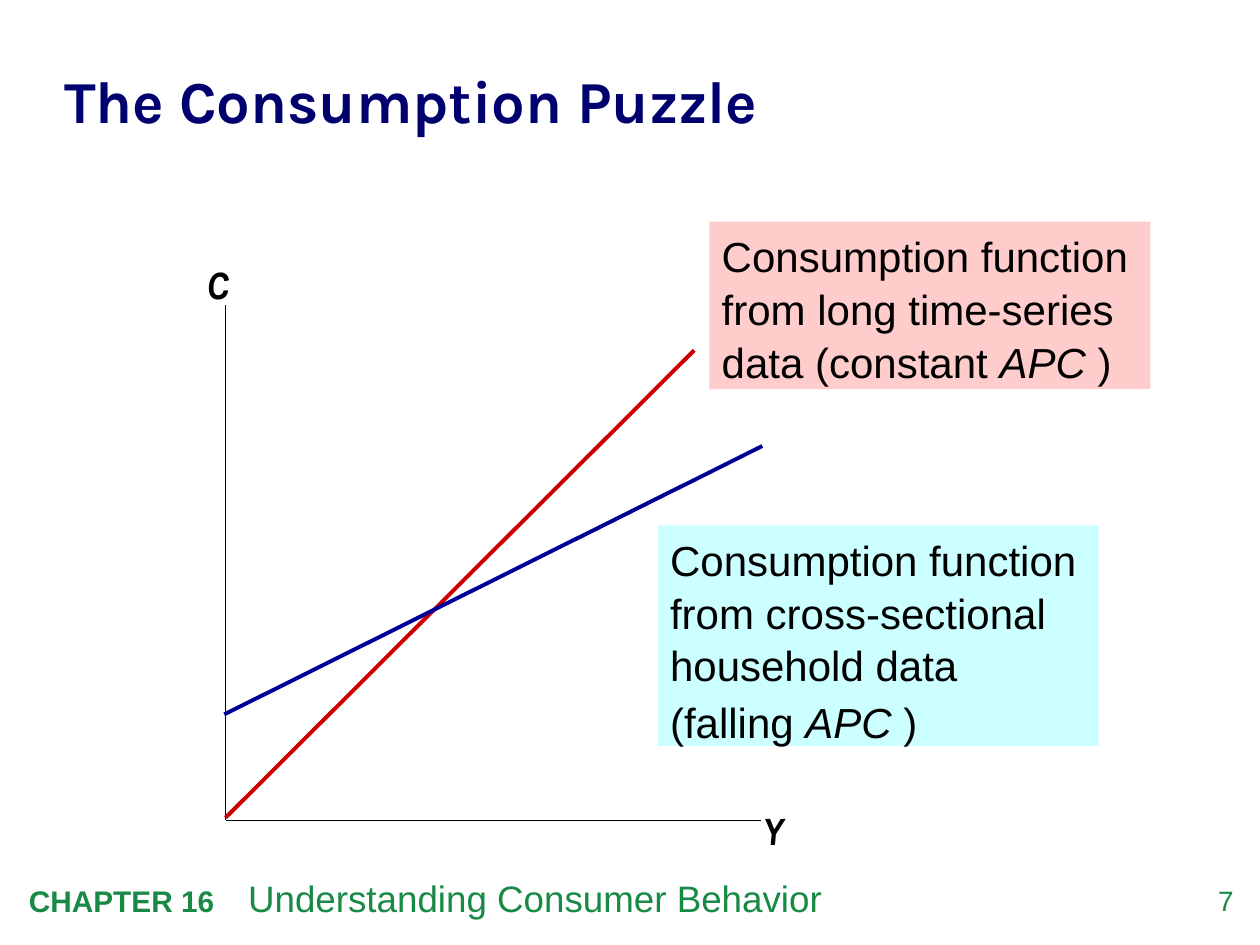
import lxml.etree
import pptx
import pptx.dml.color
import pptx.enum.shapes
import pptx.enum.text
import pptx.oxml.ns
import pptx.util

RGBColor = pptx.dml.color.RGBColor
Align = pptx.enum.text.PP_ALIGN
Anchor = pptx.enum.text.MSO_ANCHOR

BLACK = RGBColor(0x00, 0x00, 0x00)
NAVY = RGBColor(0x00, 0x00, 0x6E)
GREEN = RGBColor(0x19, 0x8A, 0x46)
RED = RGBColor(0xCC, 0x00, 0x00)
BLUE = RGBColor(0x00, 0x00, 0x99)
PINK = RGBColor(0xFF, 0xCC, 0xCC)
CYAN = RGBColor(0xCC, 0xFF, 0xFF)

COLUMNS, ROWS = 100, 75
ORIGIN = (17.9, 65.1)


class Painter:
    body_font = "Arial"
    head_font = "Karla"

    def __init__(self, deck):
        self.page = deck.slides.add_slide(deck.slide_layouts[6])
        self.column = deck.slide_width / COLUMNS
        self.row = deck.slide_height / ROWS

    def place(self, *cells):
        steps = (self.column, self.row) * 2
        return [round(cell * step) for cell, step in zip(cells, steps)]

    def add_spans(self, para, parts, font, size, color):
        for text, style in parts:
            span = para.add_run()
            span.text = text
            span.font.name = font
            span.font.size = pptx.util.Pt(style.get("size", size))
            span.font.color.rgb = color
            span.font.bold = style.get("bold", False)
            span.font.italic = style.get("italic", False)

    def label(self, cells, parts, size, color, font=body_font, inset=True,
              align=Align.LEFT, anchor=Anchor.TOP, spacing=None):
        frame = self.page.shapes.add_textbox(*self.place(*cells)).text_frame
        frame.word_wrap = True
        frame.vertical_anchor = anchor
        if not inset:
            frame.margin_left = frame.margin_right = 0
            frame.margin_top = frame.margin_bottom = 0
        para = frame.paragraphs[0]
        para.alignment = align
        para.line_spacing = spacing
        self.add_spans(para, parts, font, size, color)
        return para

    def tab(self, para, columns):
        tag = pptx.oxml.ns.qn
        stops = lxml.etree.SubElement(para._p.get_or_add_pPr(), tag("a:tabLst"))
        position = str(round(columns * self.column))
        lxml.etree.SubElement(stops, tag("a:tab"), pos=position, algn="l")

    def line(self, start, end, color, width):
        line = self.page.shapes.add_connector(
            pptx.enum.shapes.MSO_CONNECTOR.STRAIGHT, *self.place(*start, *end))
        line.line.color.rgb = color
        line.line.width = pptx.util.Pt(width)
        properties = line._element.spPr
        lxml.etree.SubElement(properties, pptx.oxml.ns.qn("a:effectLst"))

    def callout(self, cells, fill, paragraphs):
        box = self.page.shapes.add_shape(
            pptx.enum.shapes.MSO_SHAPE.RECTANGLE, *self.place(*cells))
        box.shadow.inherit = False
        box.fill.solid()
        box.fill.fore_color.rgb = fill
        box.line.fill.background()
        frame = box.text_frame
        frame.word_wrap = True
        frame.vertical_anchor = Anchor.TOP
        for index, parts in enumerate(paragraphs):
            para = frame.add_paragraph() if index else frame.paragraphs[0]
            para.alignment = Align.LEFT
            para.line_spacing = 1.05
            para.space_before = pptx.util.Pt(2.4)
            self.add_spans(para, parts, self.body_font, 24, BLACK)


def main():
    deck = pptx.Presentation()
    deck.slide_width = pptx.util.Inches(10)
    deck.slide_height = pptx.util.Inches(7.5)
    painter = Painter(deck)
    bold, italic = {"bold": True}, {"italic": True}

    painter.label((92.4, 70.1, 5.5, 3.2), [("7", {})], 16, GREEN,
                  inset=False, align=Align.RIGHT)
    footer = painter.label(
        (1.3, 69, 81.8, 4.5),
        [("CHAPTER 16\t", {"bold": True, "size": 17}),
         ("Understanding Consumer Behavior", {})], 21, GREEN)
    painter.tab(footer, 17.4)
    painter.label((5.1, 2.6, 90.2, 10.3), [("The Consumption Puzzle", bold)],
                  34, NAVY, painter.head_font, inset=False,
                  anchor=Anchor.MIDDLE, spacing=1.05)

    for end in ((17.9, 24.2), (60.4, 65.1)):
        painter.line(ORIGIN, end, BLACK, 0.75)
    for name, left, top in (("C", 15.4, 20.1), ("Y", 59.5, 63.4)):
        painter.label((left, top, 5, 4.8), [(name, bold | italic)],
                      23, BLACK, painter.head_font)

    apc = [("APC ", italic), (")", {})]
    painter.line((17.9, 64.9), (55.1, 27.8), RED, 2.25)
    painter.callout((56.3, 17.6, 35, 13.3), PINK, [
        [("Consumption function from long time-series data (constant ", {})] + apc])
    painter.line((17.8, 56.7), (60.5, 35.4), BLUE, 2.25)
    painter.callout((52.2, 41.7, 35, 17.5), CYAN, [
        [("Consumption function from cross-sectional household data", {})],
        [("(falling ", {})] + apc])

    deck.save("out.pptx")


if __name__ == "__main__":
    main()
